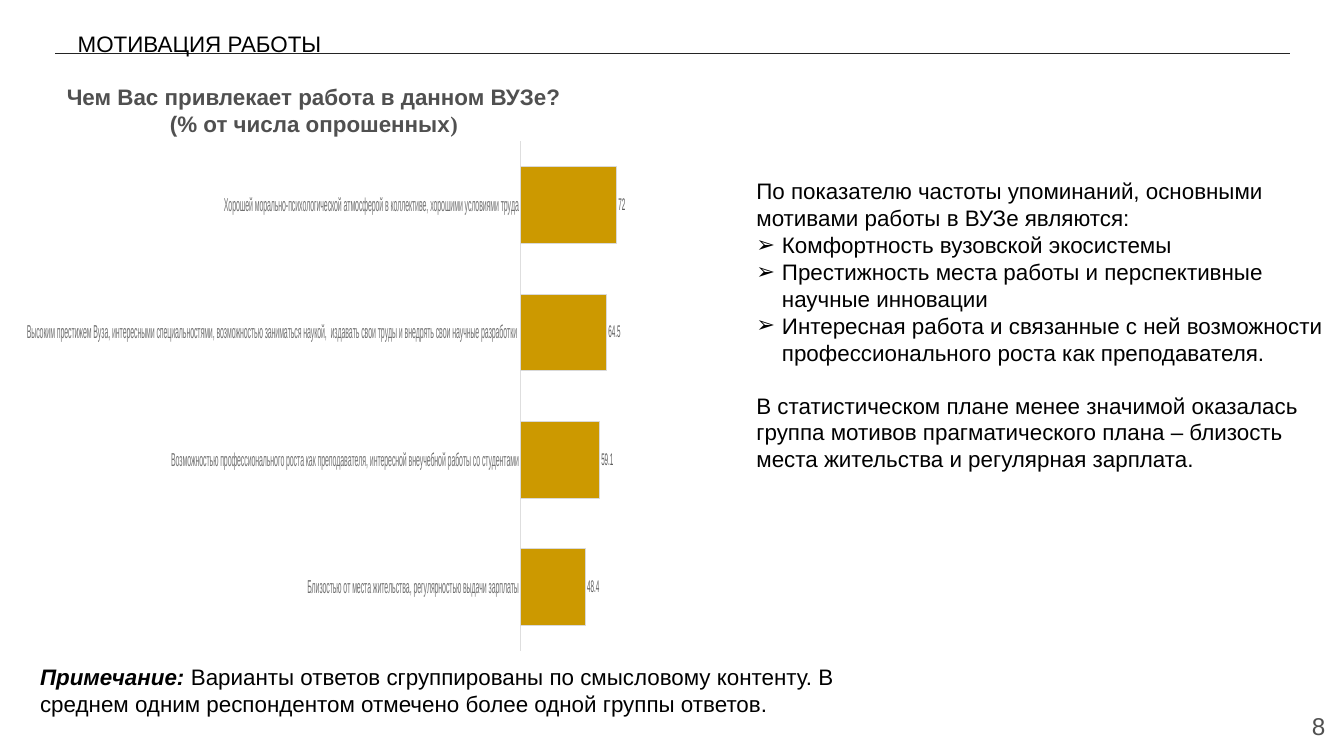
from dataclasses import dataclass

from lxml import etree
from pptx import Presentation
from pptx.chart.data import CategoryChartData
from pptx.dml.color import RGBColor
from pptx.enum.chart import XL_CHART_TYPE, XL_LABEL_POSITION, XL_TICK_MARK
from pptx.enum.shapes import MSO_CONNECTOR
from pptx.enum.text import MSO_ANCHOR, PP_ALIGN
from pptx.oxml import parse_xml
from pptx.oxml.ns import nsdecls, qn
from pptx.util import Inches, Pt

BARS = XL_CHART_TYPE.BAR_CLUSTERED
OUTSIDE = XL_LABEL_POSITION.OUTSIDE_END
NO_TICKS = XL_TICK_MARK.NONE
STRAIGHT = MSO_CONNECTOR.STRAIGHT
TOP, BOTTOM = MSO_ANCHOR.TOP, MSO_ANCHOR.BOTTOM
LEFT, CENTER, RIGHT = PP_ALIGN.LEFT, PP_ALIGN.CENTER, PP_ALIGN.RIGHT
WIDTH = Inches(10)
HEIGHT = WIDTH * 9 // 16


@dataclass(frozen=True)
class Theme:
    font: str = "Arial"
    serif: str = "Times New Roman"
    ink: str = "000000"
    grey: str = "505050"
    rule: str = "242424"
    category: str = "717171"
    value: str = "5B5B5B"
    axis: str = "DEDEDE"
    edge: str = "D9D9D9"
    bar: str = "CC9900"
    body: float = 12
    number: float = 13
    tick: float = 10
    label: float = 9
    hairline: float = 0.75


@dataclass(frozen=True)
class Box:
    left: float
    top: float
    width: float
    height: float

    def emu(self):
        return (int(WIDTH * self.left / 100), int(HEIGHT * self.top / 100),
                int(WIDTH * self.width / 100), int(HEIGHT * self.height / 100))


THEME = Theme()

ANSWERS = {
    "Близостью от места жительства, регулярностью выдачи зарплаты": 48.4,
    "Возможностью профессионального роста как преподавателя, интересной "
    "внеучебной работы со студентами": 59.1,
    "Высоким престижем Вуза, интересными специальностями, возможностью "
    "заниматься наукой,  издавать свои труды и внедрять свои научные разработки ": 64.5,
    "Хорошей морально-психологической атмосферой в коллективе, "
    "хорошими условиями труда": 72,
}
MOTIVES = [
    "Комфортность вузовской экосистемы",
    "Престижность места работы и перспективные научные инновации",
    "Интересная работа и связанные с ней возможности профессионального роста "
    "как преподавателя.",
]


def style(font, size, color, bold=None):
    font.name, font.size, font.bold = THEME.font, Pt(size), bold
    font.color.rgb = RGBColor.from_string(color)


def add_frame(slide, box, inset=0.05, anchor=TOP):
    frame = slide.shapes.add_textbox(*box.emu()).text_frame
    frame.word_wrap = True
    frame.vertical_anchor = anchor
    frame.margin_top = frame.margin_bottom = Inches(inset)
    return frame


def write(frame, lines, size=THEME.body, color=THEME.ink, align=LEFT, bold=None):
    paragraphs = [frame.paragraphs[0]] + [frame.add_paragraph() for _ in lines[1:]]
    for paragraph, line in zip(paragraphs, lines):
        paragraph.add_run().text = line
        paragraph.alignment = align
        style(paragraph.font, size, color, bold)
    return paragraphs


def add_header(slide, box):
    left, top, width, height = box.emu()
    baseline = top + int(height * 0.85)
    rule = slide.shapes.add_connector(STRAIGHT, left, baseline, left + width, baseline)
    rule.line.color.rgb = RGBColor.from_string(THEME.rule)
    rule.line.width = Pt(THEME.hairline)
    etree.SubElement(rule._element.spPr, qn("a:effectLst"))
    heading = Box(box.left + 0.7, box.top, 38.1, box.height)
    write(add_frame(slide, heading, anchor=BOTTOM), ["МОТИВАЦИЯ РАБОТЫ"])


def add_question(slide, box):
    lines = write(add_frame(slide, box, 0.1),
                  ["Чем Вас привлекает работа в данном ВУЗе?", "(% от числа опрошенных"],
                  color=THEME.grey, align=CENTER, bold=True)
    bracket = lines[-1].add_run()
    bracket.text = ")"
    bracket.font.name = THEME.serif


def add_answers_chart(slide, box):
    data = CategoryChartData()
    data.categories = list(ANSWERS)
    data.add_series("Series 1", list(ANSWERS.values()))
    chart = slide.shapes.add_chart(BARS, *box.emu(), data).chart
    chart.has_legend = chart.has_title = False
    style(chart.font, THEME.tick, THEME.rule)

    reasons = chart.category_axis
    reasons.major_tick_mark = reasons.minor_tick_mark = NO_TICKS
    reasons.format.line.color.rgb = RGBColor.from_string(THEME.axis)
    reasons.format.line.width = Pt(THEME.hairline)
    style(reasons.tick_labels.font, THEME.tick, THEME.category)

    percent = chart.value_axis
    percent.visible = percent.has_major_gridlines = False
    percent.minimum_scale, percent.maximum_scale = 0, 80

    plot = chart.plots[0]
    plot.gap_width, plot.vary_by_categories = 66, False
    series = plot.series[0]
    series.format.fill.solid()
    series.format.fill.fore_color.rgb = RGBColor.from_string(THEME.bar)
    series.format.line.color.rgb = RGBColor.from_string(THEME.edge)
    series.format.line.width = Pt(THEME.hairline)
    labels = series.data_labels
    labels.show_value, labels.position = True, OUTSIDE
    style(labels.font, THEME.label, THEME.value)

    area = chart._chartSpace.chart.plotArea
    for layout in area.findall(qn("c:layout")):
        area.remove(layout)
    area.insert(0, parse_xml(
        f'<c:layout {nsdecls("c")}><c:manualLayout><c:layoutTarget val="inner"/>'
        '<c:xMode val="edge"/><c:yMode val="edge"/><c:x val="0.51"/><c:y val="0.01"/>'
        '<c:w val="0.47"/><c:h val="0.98"/></c:manualLayout></c:layout>'))


def add_bullet(paragraph):
    properties = paragraph._p.get_or_add_pPr()
    properties.set("marL", str(Inches(0.19)))
    properties.set("indent", str(-Inches(0.19)))
    for markup in (f'<a:buClr {nsdecls("a")}><a:srgbClr val="{THEME.ink}"/></a:buClr>',
                   f'<a:buFont {nsdecls("a")} typeface="{THEME.font}"/>',
                   f'<a:buChar {nsdecls("a")} char="➢"/>'):
        properties.insert_element_before(parse_xml(markup),
                                         "a:tabLst", "a:defRPr", "a:extLst")


def add_conclusions(slide, box):
    frame = add_frame(slide, box)
    frame.margin_top = Inches(0.85)
    opening = ("По показателю частоты упоминаний, основными мотивами работы "
               "в ВУЗе являются:")
    closing = ("В статистическом плане менее значимой оказалась группа мотивов "
               "прагматического плана – близость места жительства и регулярная зарплата.")
    paragraphs = write(frame, [opening, *MOTIVES, closing])
    for motive in paragraphs[1:-1]:
        add_bullet(motive)
    paragraphs[-1].space_before = Pt(14)


def add_note(slide, box):
    note = write(add_frame(slide, box), ["Примечание:"])[0]
    lead = note.runs[0].font
    lead.bold = lead.italic = True
    note.add_run().text = (" Варианты ответов сгруппированы по смысловому контенту. "
                           "В среднем одним респондентом отмечено более одной группы ответов.")


def add_page_number(slide, box):
    write(add_frame(slide, box, 0.1), ["8"], THEME.number, THEME.grey, RIGHT)


def main():
    deck = Presentation()
    deck.slide_width, deck.slide_height = WIDTH, HEIGHT
    slide = deck.slides.add_slide(deck.slide_layouts[6])
    add_header(slide, Box(4.1, 0, 91.9, 8.36))
    add_page_number(slide, Box(93.6, 92.27, 6, 7.64))
    add_question(slide, Box(2, 9.24, 42.7, 10.84))
    add_answers_chart(slide, Box(2, 18, 45, 68.8))
    add_note(slide, Box(2, 86.8, 62, 8.89))
    add_conclusions(slide, Box(55.3, 8.36, 44.3, 59.2))
    deck.save("out.pptx")


if __name__ == "__main__":
    main()
